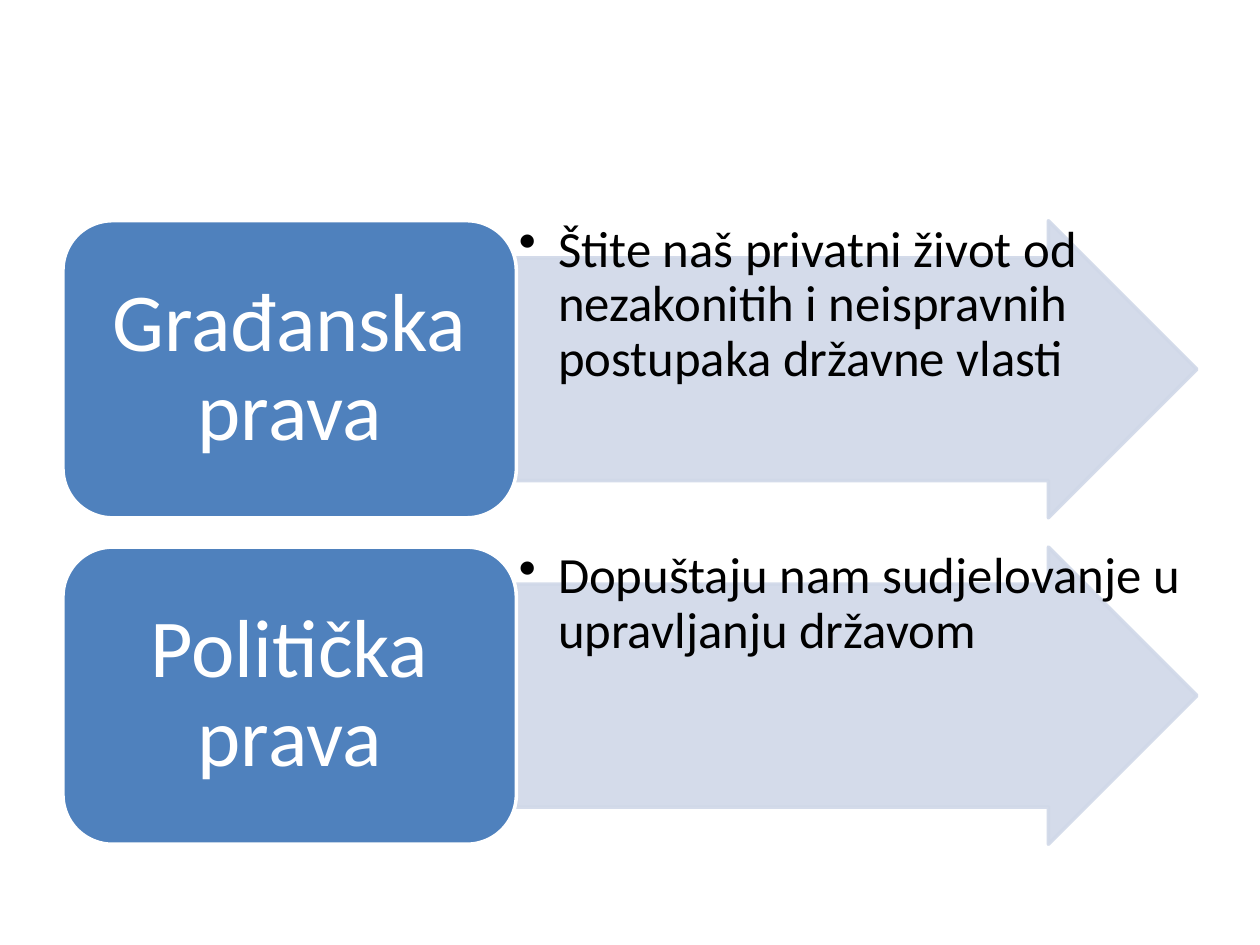
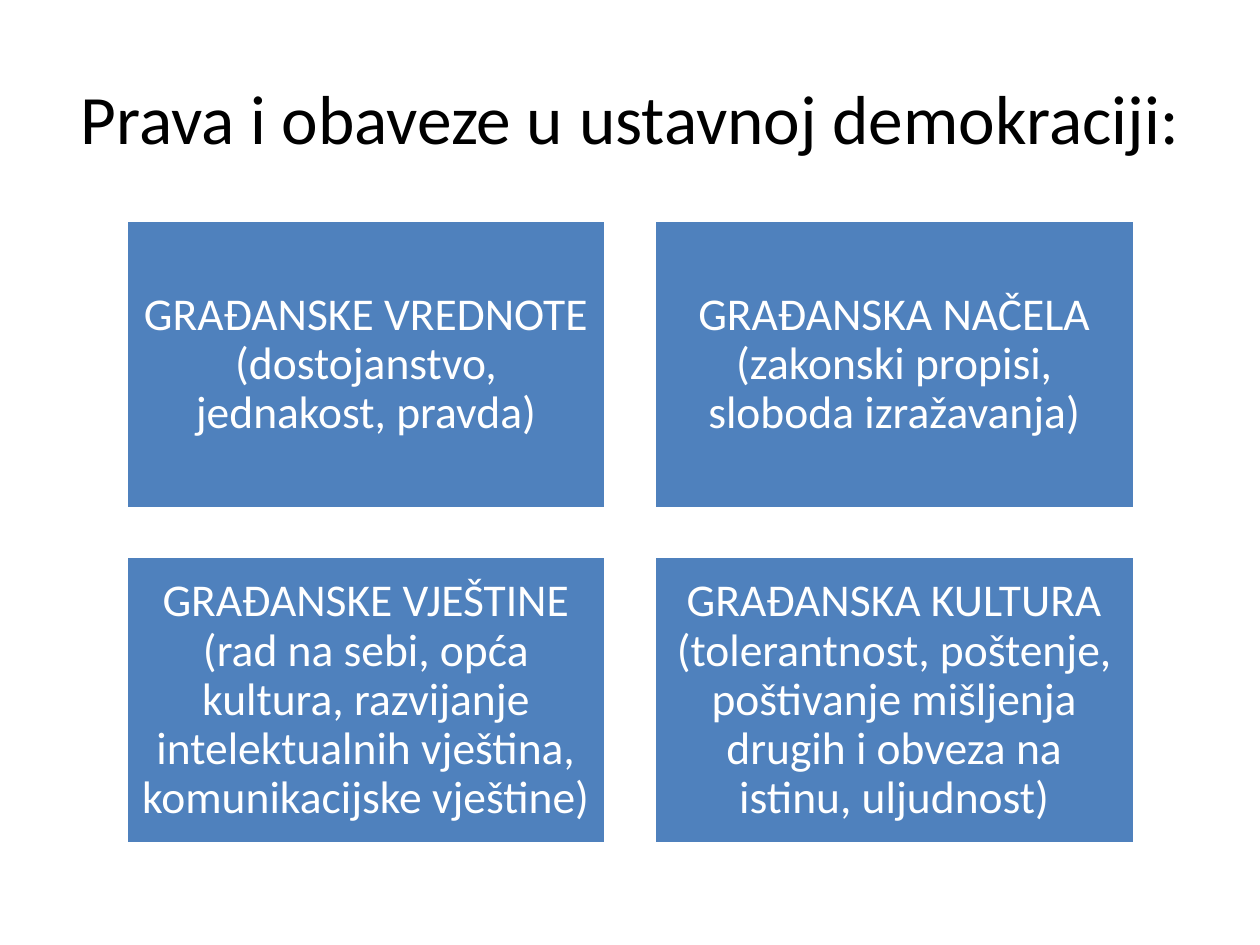
from dataclasses import dataclass

from lxml.etree import SubElement
from pptx import Presentation
from pptx.dml.color import RGBColor
from pptx.enum.shapes import MSO_SHAPE
from pptx.enum.text import MSO_ANCHOR, MSO_AUTO_SIZE, PP_ALIGN
from pptx.oxml.ns import qn
from pptx.util import Cm, Pt


@dataclass(frozen=True)
class Theme:
    font: str = "Calibri"
    blue: RGBColor = RGBColor(0x4F, 0x81, 0xBD)
    pale_blue: RGBColor = RGBColor(0xD0, 0xD8, 0xE8)
    white: RGBColor = RGBColor(0xFF, 0xFF, 0xFF)
    black: RGBColor = RGBColor(0, 0, 0)
    title_size: float = 39.6
    right_size: float = 47
    explanation_size: float = 29
    box_size: float = 26
    outline: float = 2
    arrow_opacity: int = 90


THEME = Theme()
TITLE_ONLY, BLANK = 5, 6
CONTENT_TOP = 4.45

RIGHTS = [
    ("Građanska prava",
     "Štite naš privatni život od nezakonitih i neispravnih postupaka državne vlasti"),
    ("Politička prava", "Dopuštaju nam sudjelovanje u upravljanju državom"),
]
DUTIES = [
    "GRAĐANSKE VREDNOTE (dostojanstvo, jednakost, pravda)",
    "GRAĐANSKA NAČELA (zakonski propisi, sloboda izražavanja)",
    "GRAĐANSKE VJEŠTINE (rad na sebi, opća kultura, razvijanje "
    "intelektualnih vještina, komunikacijske vještine)",
    "GRAĐANSKA KULTURA (tolerantnost, poštenje, poštivanje mišljenja "
    "drugih i obveza na istinu, uljudnost)",
]


def write_text(shape, text, *, size, color=THEME.white, align=PP_ALIGN.CENTER,
               anchor=MSO_ANCHOR.MIDDLE, margins=(0.25, 0.13), line_spacing=0.9):
    """Fill a shape with one paragraph; margins are (horizontal, vertical) in cm."""
    frame = shape.text_frame
    frame.word_wrap = True
    frame.auto_size = MSO_AUTO_SIZE.NONE
    frame.vertical_anchor = anchor
    frame.margin_left = frame.margin_right = Cm(margins[0])
    frame.margin_top = frame.margin_bottom = Cm(margins[1])
    paragraph = frame.paragraphs[0]
    paragraph.alignment = align
    paragraph.line_spacing = line_spacing
    run = paragraph.add_run()
    run.text = text
    run.font.name = THEME.font
    run.font.size = Pt(size)
    run.font.color.rgb = color
    return paragraph


def add_bullet(paragraph, indent):
    properties = paragraph._p.get_or_add_pPr()
    properties.set("marL", str(Cm(indent)))
    properties.set("indent", str(-Cm(indent)))
    SubElement(properties, qn("a:buChar"), char="•")


def set_opacity(shape, percent):
    """Make both the fill and the line of a shape partly transparent."""
    for color in shape._element.spPr.iter(qn("a:srgbClr")):
        SubElement(color, qn("a:alpha"), val=str(percent * 1000))


def add_panel(slide, kind, box, fill=THEME.blue, line=THEME.white):
    shape = slide.shapes.add_shape(kind, *map(Cm, box))
    shape.shadow.inherit = False
    shape.fill.solid()
    shape.fill.fore_color.rgb = fill
    shape.line.color.rgb = line
    shape.line.width = Pt(THEME.outline)
    return shape


def add_explanation_arrow(slide, box, text):
    arrow = add_panel(slide, MSO_SHAPE.RIGHT_ARROW, box, THEME.pale_blue, THEME.pale_blue)
    arrow.adjustments[0], arrow.adjustments[1] = 0.75, 0.5
    set_opacity(arrow, THEME.arrow_opacity)
    # The text uses the full arrow box, which is taller than the arrow's shaft.
    explanation = slide.shapes.add_textbox(*map(Cm, box))
    paragraph = write_text(explanation, text, size=THEME.explanation_size,
                           color=THEME.black, align=PP_ALIGN.LEFT,
                           anchor=MSO_ANCHOR.TOP, margins=(0.05, 0.05))
    add_bullet(paragraph, 0.79)


def add_title(slide, text):
    title = slide.shapes.title
    title.left, title.top, title.width, title.height = map(Cm, (1.27, 0.76, 22.86, 3.18))
    write_text(title, text, size=THEME.title_size, color=THEME.black, line_spacing=1.0)


def build_rights_slide(presentation):
    slide = presentation.slides.add_slide(presentation.slide_layouts[BLANK])
    left, name_width, arrow_width, height, pitch = 1.27, 9.14, 13.72, 5.99, 6.58
    for row, (name, explanation) in enumerate(RIGHTS):
        top = CONTENT_TOP + row * pitch
        add_explanation_arrow(slide, (left + name_width, top, arrow_width, height), explanation)
        panel = add_panel(slide, MSO_SHAPE.ROUNDED_RECTANGLE, (left, top, name_width, height))
        write_text(panel, name, size=THEME.right_size, margins=(0.22, 0))


def build_duties_slide(presentation):
    slide = presentation.slides.add_slide(presentation.slide_layouts[TITLE_ONLY])
    add_title(slide, "Prava i obaveze u ustavnoj demokraciji:")
    left, width, height, gap = 2.54, 9.68, 5.8, 0.97
    for index, duty in enumerate(DUTIES):
        row, column = divmod(index, 2)
        box = (left + column * (width + gap), CONTENT_TOP + row * (height + gap), width, height)
        panel = add_panel(slide, MSO_SHAPE.RECTANGLE, box)
        write_text(panel, duty, size=THEME.box_size, margins=(0.28, 0.28))


def main():
    presentation = Presentation()
    presentation.slide_width, presentation.slide_height = Cm(25.4), Cm(19.05)
    build_rights_slide(presentation)
    build_duties_slide(presentation)
    presentation.save("out.pptx")


if __name__ == "__main__":
    main()
